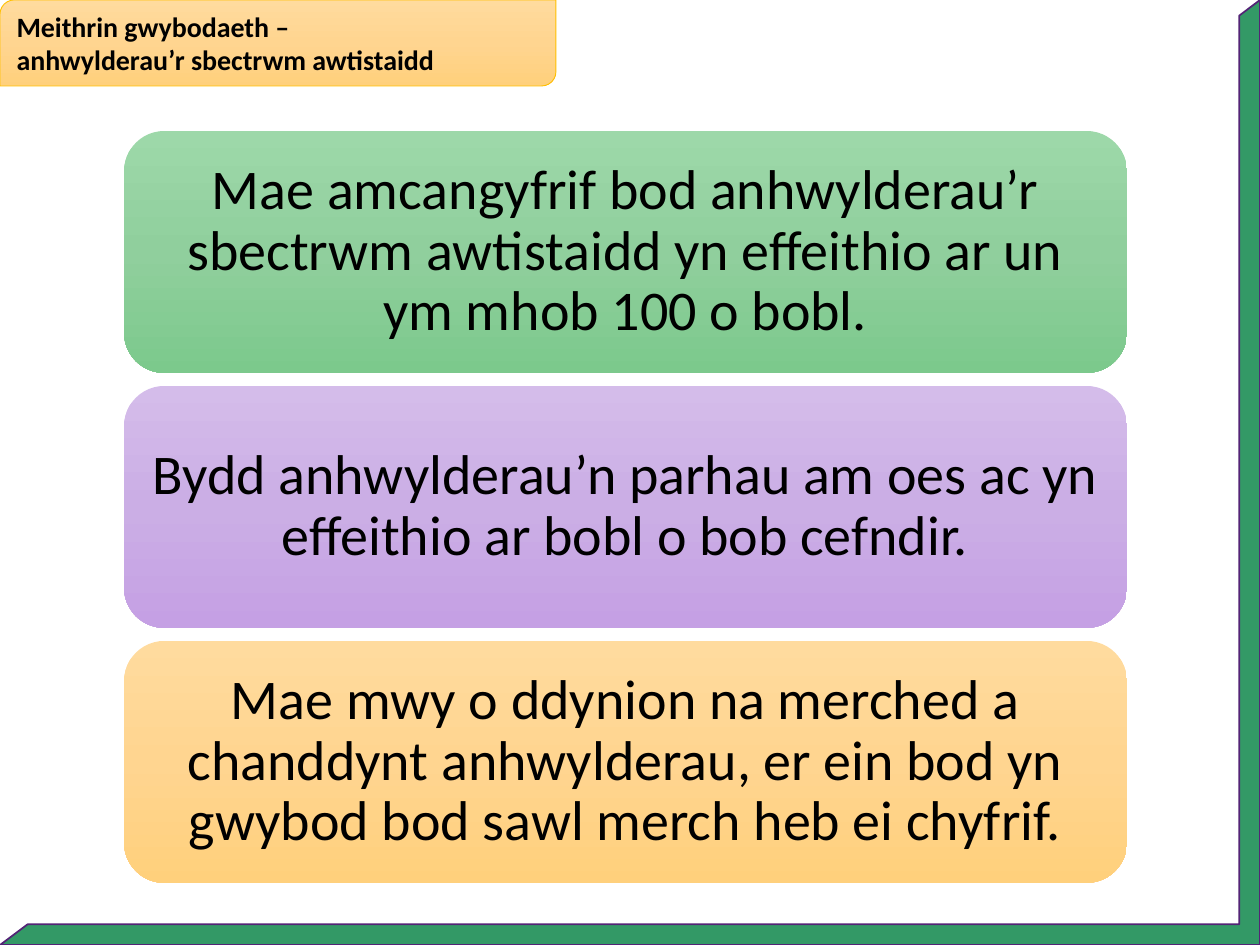
import copy
import pptx
import pptx.util
import pptx.dml.color
import pptx.enum.shapes
import pptx.enum.text
import pptx.oxml.ns

SHAPE = pptx.enum.shapes.MSO_SHAPE
ALIGN = pptx.enum.text.PP_ALIGN
PX = 914400 // 126

THEME = {
    "font": "Calibri", "text": "000000", "body": 32, "title": 16,
    "frame": "339966", "frame_line": "532476", "title_line": "FFC000",
    "green": ("9DD8A9", "90CF9D", "7CC98C"),
    "purple": ("D4BCEA", "CBAEE5", "C5A0E4"),
    "amber": ("FFDB9E", "FFD590", "FFD07C"),
}

TITLE = ["Meithrin gwybodaeth –", "anhwylderau’r sbectrwm awtistaidd"]
FACTS = [
    ("green", "Mae amcangyfrif bod anhwylderau’r sbectrwm awtistaidd yn effeithio ar un ym mhob 100 o bobl."),
    ("purple", "Bydd anhwylderau’n parhau am oes ac yn effeithio ar bobl o bob cefndir."),
    ("amber", "Mae mwy o ddynion na merched a chanddynt anhwylderau, er ein bod yn gwybod bod sawl merch heb ei chyfrif."),
]
CARD_LEFT, CARD_TOP, CARD_W, CARD_H, CARD_GAP = 124, 131, 1003, 242, 13


def rgb(value):
    return pptx.dml.color.RGBColor.from_string(value)


def add_shape(slide, kind, box, line=None, width=1, adjustments=()):
    sp = slide.shapes.add_shape(kind, *(v * PX for v in box))
    sp.shadow.inherit = False
    for i, value in enumerate(adjustments):
        sp.adjustments[i] = value
    if line:
        sp.line.color.rgb = rgb(line)
        sp.line.width = pptx.util.Pt(width)
    else:
        sp.line.fill.background()
    return sp


def fill_gradient(sp, colors):
    sp.fill.gradient()
    sp.fill.gradient_angle = 270
    stops = next(sp._element.spPr.iter(pptx.oxml.ns.qn("a:gsLst")))
    stops.insert(1, copy.deepcopy(stops[0]))
    for stop, color, position in zip(sp.fill.gradient_stops, colors, (0, 0.5, 1)):
        stop.color.rgb = rgb(color)
        stop.position = position


def write_text(sp, lines, size, bold=False, align=ALIGN.LEFT, spacing=1.0, inset=None):
    tf = sp.text_frame
    tf.word_wrap = True
    tf.vertical_anchor = pptx.enum.text.MSO_ANCHOR.MIDDLE
    if inset is not None:
        tf.margin_left = tf.margin_right = tf.margin_top = tf.margin_bottom = inset * PX
    for i, line in enumerate(lines):
        p = tf.add_paragraph() if i else tf.paragraphs[0]
        p.alignment = align
        p.line_spacing = spacing
        r = p.add_run()
        r.text = line
        r.font.name = THEME["font"]
        r.font.size = pptx.util.Pt(size)
        r.font.bold = bold
        r.font.color.rgb = rgb(THEME["text"])


def main():
    prs = pptx.Presentation()
    prs.slide_width = pptx.util.Inches(10)
    prs.slide_height = pptx.util.Inches(7.5)
    slide = prs.slides.add_slide(prs.slide_layouts[6])

    frame = add_shape(slide, SHAPE.HALF_FRAME, (0, 0, 1260, 945),
                      line=THEME["frame_line"], adjustments=(0.022, 0.022))
    frame.rotation = 180
    frame.fill.solid()
    frame.fill.fore_color.rgb = rgb(THEME["frame"])

    for i, (color, fact) in enumerate(FACTS):
        top = CARD_TOP + i * (CARD_H + CARD_GAP)
        card = add_shape(slide, SHAPE.ROUNDED_RECTANGLE, (CARD_LEFT, top, CARD_W, CARD_H))
        fill_gradient(card, THEME[color])
        write_text(card, [fact], THEME["body"], align=ALIGN.CENTER, spacing=0.9, inset=16)

    title = add_shape(slide, SHAPE.ROUND_2_DIAG_RECTANGLE, (0, 0, 556, 86),
                      line=THEME["title_line"], width=0.5, adjustments=(0.167, 0))
    fill_gradient(title, THEME["amber"])
    write_text(title, TITLE, THEME["title"], bold=True)

    prs.save("out.pptx")


if __name__ == "__main__":
    main()
